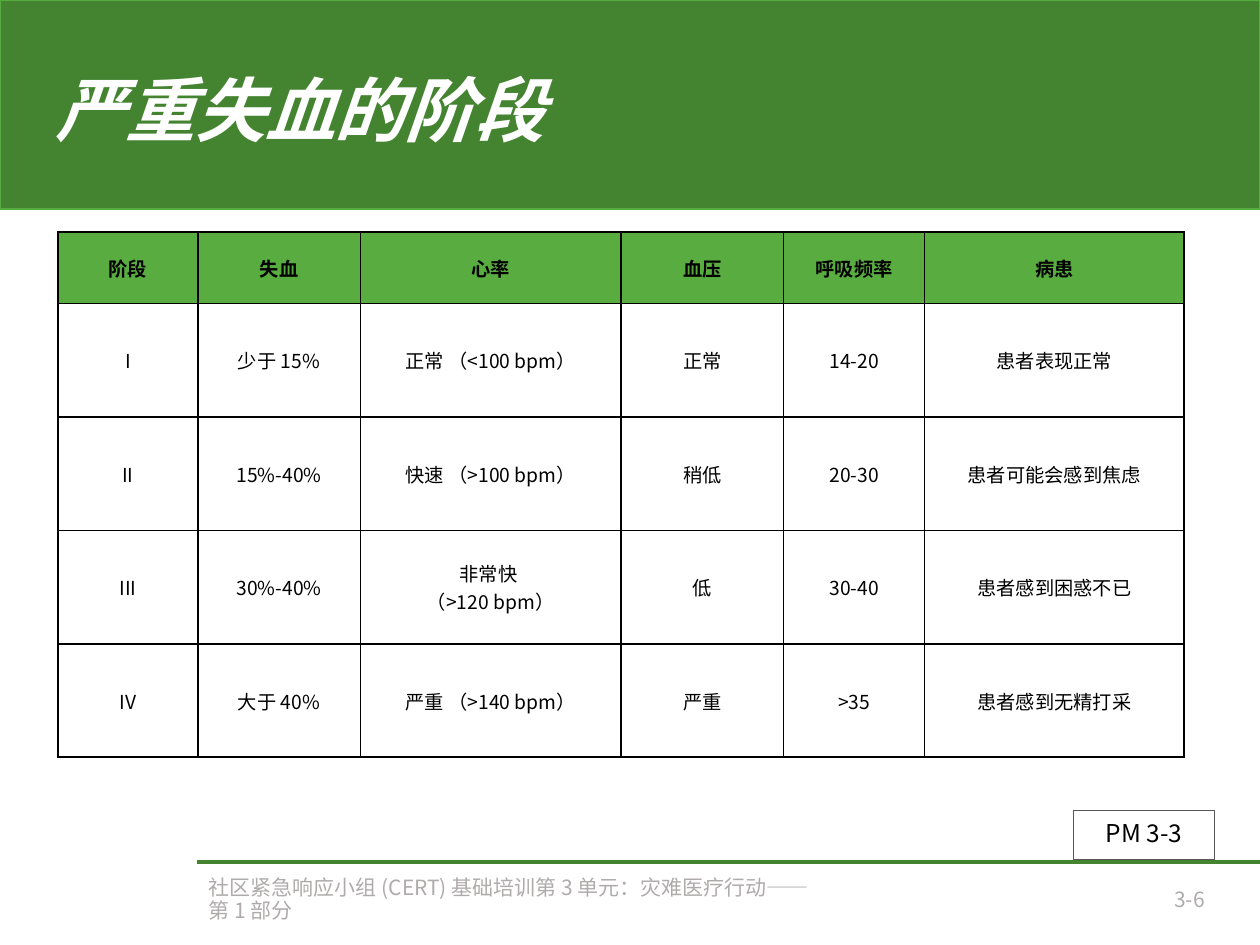
"""Build the slide on the stages of severe blood loss."""
import pptx
import pptx.dml.color
import pptx.enum.shapes
import pptx.enum.text
import pptx.util
from lxml import etree
from pptx.oxml.ns import qn

Inches = pptx.util.Inches
Pt = pptx.util.Pt
ALIGN = pptx.enum.text.PP_ALIGN
MIDDLE = pptx.enum.text.MSO_ANCHOR.MIDDLE
RECTANGLE = pptx.enum.shapes.MSO_SHAPE.RECTANGLE
FONT = "Noto Sans CJK SC"
GREEN = "448431"


def color(value):
    return pptx.dml.color.RGBColor.from_string(value)


def add_text(paragraph, text, size, ink, align, bold=False, italic=False):
    paragraph.alignment = align
    run = paragraph.add_run()
    run.text = text
    run.font.name = FONT
    run.font.size = Pt(size)
    run.font.bold = bold
    run.font.italic = italic
    run.font.color.rgb = color(ink)
    etree.SubElement(run.font._element, qn("a:ea"), typeface=FONT)


presentation = pptx.Presentation()
presentation.slide_width = Inches(10)
presentation.slide_height = Inches(7.5)
slide = presentation.slides.add_slide(presentation.slide_layouts[6])

footer_rule = slide.shapes.add_connector(
    pptx.enum.shapes.MSO_CONNECTOR.STRAIGHT,
    Inches(1.56), Inches(6.84), Inches(10), Inches(6.84))
footer_rule.line.color.rgb = color(GREEN)
footer_rule.line.width = Pt(2.04)
etree.SubElement(footer_rule._element.spPr, qn("a:effectLst"))

banner = slide.shapes.add_shape(RECTANGLE, 0, 0, Inches(10), Inches(1.66))
banner.shadow.inherit = False
banner.fill.solid()
banner.fill.fore_color.rgb = color(GREEN)
banner.line.color.rgb = color("57AC40")
banner.line.width = Pt(1)

page_box = slide.shapes.add_shape(
    RECTANGLE, Inches(8.52), Inches(6.43), Inches(1.12), Inches(0.39))
page_box.shadow.inherit = False
page_box.fill.background()
page_box.line.color.rgb = color("575757")
page_box.line.width = Pt(0.75)

title = slide.shapes.add_textbox(Inches(0.34), Inches(0.35), Inches(6.35), Inches(1.11))
footer = slide.shapes.add_textbox(Inches(1.56), Inches(6.98), Inches(5.04), Inches(0.33))
page_number = slide.shapes.add_textbox(Inches(7.69), Inches(6.98), Inches(1.97), Inches(0.33))

for shape, text, size, ink, align, strong in [
    (title, "严重失血的阶段", 40, "FFFFFF", ALIGN.LEFT, True),
    (footer, "社区紧急响应小组 (CERT) 基础培训第 3 单元：灾难医疗行动——第 1 部分",
     12, "AFABAB", ALIGN.LEFT, False),
    (page_number, "3-6", 12, "AFABAB", ALIGN.RIGHT, False),
    (page_box, "PM 3-3", 14, "000000", ALIGN.CENTER, False),
]:
    frame = shape.text_frame
    frame.word_wrap = True
    frame.vertical_anchor = MIDDLE
    paragraph = frame.paragraphs[0]
    paragraph.line_spacing = 0.9
    add_text(paragraph, text, size, ink, align, strong, strong)

rows = [
    ["阶段", "失血", "心率", "血压", "呼吸频率", "病患"],
    ["I", "少于 15%", "正常 （<100 bpm）", "正常", "14-20", "患者表现正常"],
    ["II", "15%-40%", "快速 （>100 bpm）", "稍低", "20-30", "患者可能会感到焦虑"],
    ["III", "30%-40%", "非常快 \n（>120 bpm）", "低", "30-40", "患者感到困惑不已"],
    ["IV", "大于 40%", "严重 （>140 bpm）", "严重", ">35", "患者感到无精打采"],
]
column_widths = [1.11, 1.29, 2.07, 1.29, 1.12, 2.06]
row_heights = [0.57] + [0.9] * 4
table = slide.shapes.add_table(
    len(rows), len(column_widths), Inches(0.46), Inches(1.84),
    Inches(sum(column_widths)), Inches(sum(row_heights))).table
table.horz_banding = False
for column, width in zip(table.columns, column_widths):
    column.width = Inches(width)

for row_index, texts in enumerate(rows):
    table.rows[row_index].height = Inches(row_heights[row_index])
    is_header = row_index == 0
    for column_index, text in enumerate(texts):
        cell = table.cell(row_index, column_index)
        cell.vertical_anchor = MIDDLE
        cell.margin_left = cell.margin_right = Inches(0.04)
        cell.margin_top = cell.margin_bottom = 0
        for side in ("a:lnL", "a:lnR", "a:lnT", "a:lnB"):
            border = etree.SubElement(cell._tc.tcPr, qn(side), w=str(Pt(1)))
            border_fill = etree.SubElement(border, qn("a:solidFill"))
            etree.SubElement(border_fill, qn("a:srgbClr"), val="000000")
        if is_header:
            cell.fill.solid()
            cell.fill.fore_color.rgb = color("59AD40")
        else:
            cell.fill.background()
        for line_index, line in enumerate(text.split("\n")):
            frame = cell.text_frame
            paragraph = frame.add_paragraph() if line_index else frame.paragraphs[0]
            add_text(paragraph, line, 11, "000000", ALIGN.CENTER, is_header)

presentation.save("out.pptx")
